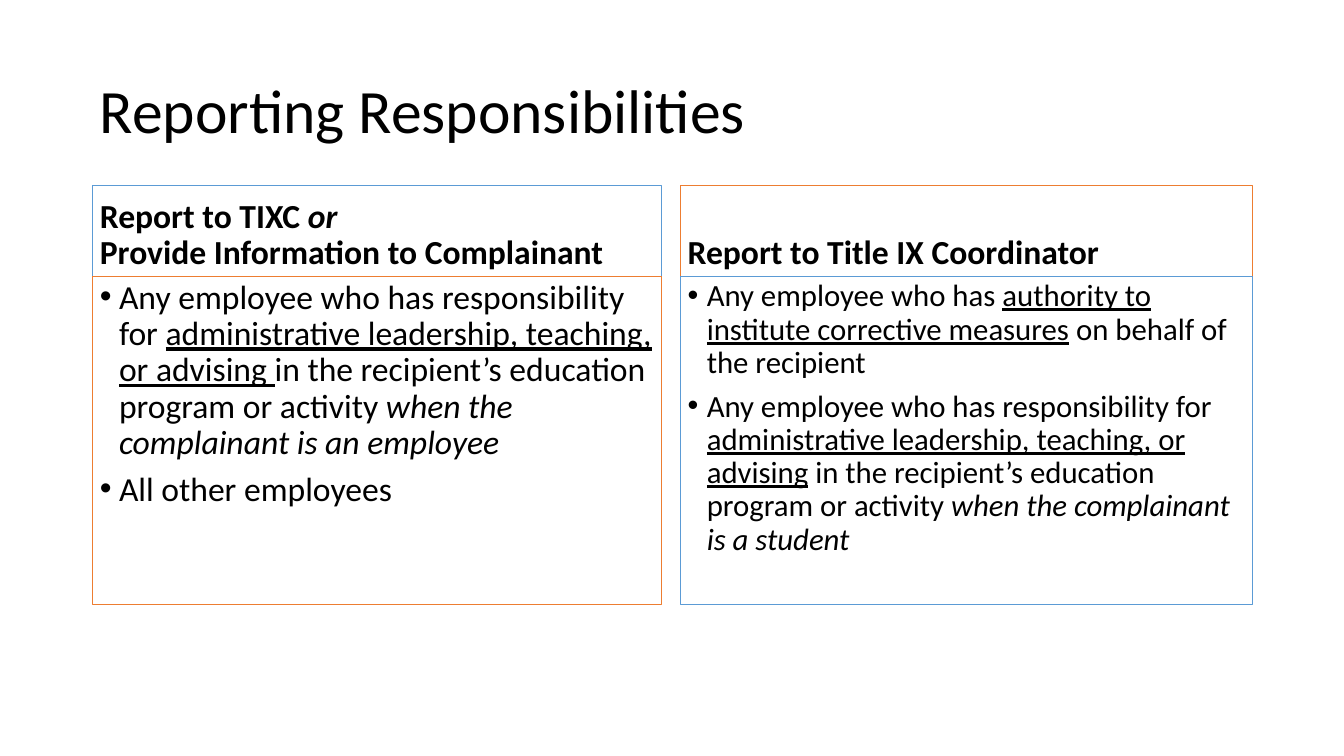
from dataclasses import dataclass

from lxml.etree import SubElement
from pptx import Presentation
from pptx.dml.color import RGBColor
from pptx.enum.text import MSO_ANCHOR, MSO_AUTO_SIZE, PP_ALIGN
from pptx.oxml.ns import qn
from pptx.shapes.placeholder import SlidePlaceholder
from pptx.text.text import _Paragraph
from pptx.util import Inches, Pt

BLACK = RGBColor(0x00, 0x00, 0x00)
BLUE = RGBColor(0x5B, 0x9B, 0xD5)
ORANGE = RGBColor(0xED, 0x7D, 0x31)
FONT = "Calibri"
COMPARISON_LAYOUT = 4

# Grid in inches: (start, end) of each column and row
FULL_WIDTH, LEFT_COLUMN, RIGHT_COLUMN = (0.92, 12.42), (0.92, 6.56), (6.75, 12.42)
TITLE_ROW, HEADING_ROW, LIST_ROW = (0.4, 1.85), (1.84, 2.74), (2.74, 6.0)
HANGING_INDENT = Inches(0.19)


@dataclass(frozen=True)
class Phrase:
    text: str
    bold: bool = False
    italic: bool = False
    underline: bool = False


@dataclass(frozen=True)
class Panel:
    column: tuple[float, float]
    row: tuple[float, float]
    border: RGBColor | None
    size: int
    anchor: MSO_ANCHOR
    paragraphs: list[list[Phrase]]
    bulleted: bool = False


PANELS = [
    # Title
    Panel(FULL_WIDTH, TITLE_ROW, None, 44, MSO_ANCHOR.MIDDLE,
          [[Phrase("Reporting Responsibilities")]]),
    # Left column
    Panel(LEFT_COLUMN, HEADING_ROW, BLUE, 24, MSO_ANCHOR.BOTTOM, [
        [Phrase("Report to TIXC ", bold=True), Phrase("or", bold=True, italic=True)],
        [Phrase("Provide Information to Complainant", bold=True)],
    ]),
    Panel(LEFT_COLUMN, LIST_ROW, ORANGE, 24, MSO_ANCHOR.TOP, [
        [Phrase("Any employee who has responsibility for "),
         Phrase("administrative leadership, teaching, or advising ", underline=True),
         Phrase("in the recipient’s education program or activity "),
         Phrase("when the complainant is an employee", italic=True)],
        [Phrase("All other employees")],
    ], bulleted=True),
    # Right column
    Panel(RIGHT_COLUMN, HEADING_ROW, ORANGE, 24, MSO_ANCHOR.BOTTOM,
          [[Phrase("Report to Title IX Coordinator", bold=True)]]),
    Panel(RIGHT_COLUMN, LIST_ROW, BLUE, 22, MSO_ANCHOR.TOP, [
        [Phrase("Any employee who has "),
         Phrase("authority to institute corrective measures", underline=True),
         Phrase(" on behalf of the recipient")],
        [Phrase("Any employee who has responsibility for "),
         Phrase("administrative leadership, teaching, or advising", underline=True),
         Phrase(" in the recipient’s education program or activity "),
         Phrase("when the complainant is a student", italic=True)],
    ], bulleted=True),
]


def set_bullet(paragraph: _Paragraph, bulleted: bool) -> None:
    properties = paragraph._p.get_or_add_pPr()
    indent = HANGING_INDENT if bulleted else 0
    properties.set("marL", str(indent))
    properties.set("indent", str(-indent))
    if bulleted:
        color = SubElement(properties, qn("a:buClr"))
        SubElement(color, qn("a:srgbClr"), val=str(BLACK))
        SubElement(properties, qn("a:buFont"), typeface="Arial")
        SubElement(properties, qn("a:buChar"), char="•")
    else:
        SubElement(properties, qn("a:buNone"))


def add_phrase(paragraph: _Paragraph, phrase: Phrase, size: int) -> None:
    run = paragraph.add_run()
    run.text = phrase.text
    run.font.name = FONT
    run.font.size = Pt(size)
    run.font.color.rgb = BLACK
    run.font.bold = phrase.bold
    run.font.italic = phrase.italic
    run.font.underline = phrase.underline


def fill_placeholder(placeholder: SlidePlaceholder, panel: Panel) -> None:
    # Place on the grid
    (left, right), (top, bottom) = panel.column, panel.row
    placeholder.left, placeholder.top = Inches(left), Inches(top)
    placeholder.width, placeholder.height = Inches(right - left), Inches(bottom - top)
    if panel.border is not None:
        placeholder.line.color.rgb = panel.border
        placeholder.line.width = Pt(0.75)

    # Text frame
    frame = placeholder.text_frame
    frame.word_wrap = True
    frame.auto_size = MSO_AUTO_SIZE.NONE
    frame.vertical_anchor = panel.anchor
    frame.margin_left = frame.margin_right = Inches(0.07)
    frame.margin_top = frame.margin_bottom = Inches(0.04)

    # Paragraphs
    for number, phrases in enumerate(panel.paragraphs):
        paragraph = frame.add_paragraph() if number else frame.paragraphs[0]
        set_bullet(paragraph, panel.bulleted)
        paragraph.alignment = PP_ALIGN.LEFT
        paragraph.line_spacing = 0.9
        paragraph.space_before = Pt(7.5 if number and panel.bulleted else 0)
        for phrase in phrases:
            add_phrase(paragraph, phrase, panel.size)


def main() -> None:
    presentation = Presentation()
    presentation.slide_width, presentation.slide_height = Inches(13.33), Inches(7.5)
    slide = presentation.slides.add_slide(presentation.slide_layouts[COMPARISON_LAYOUT])
    for placeholder, panel in zip(slide.placeholders, PANELS):
        fill_placeholder(placeholder, panel)
    presentation.save("out.pptx")


if __name__ == "__main__":
    main()
